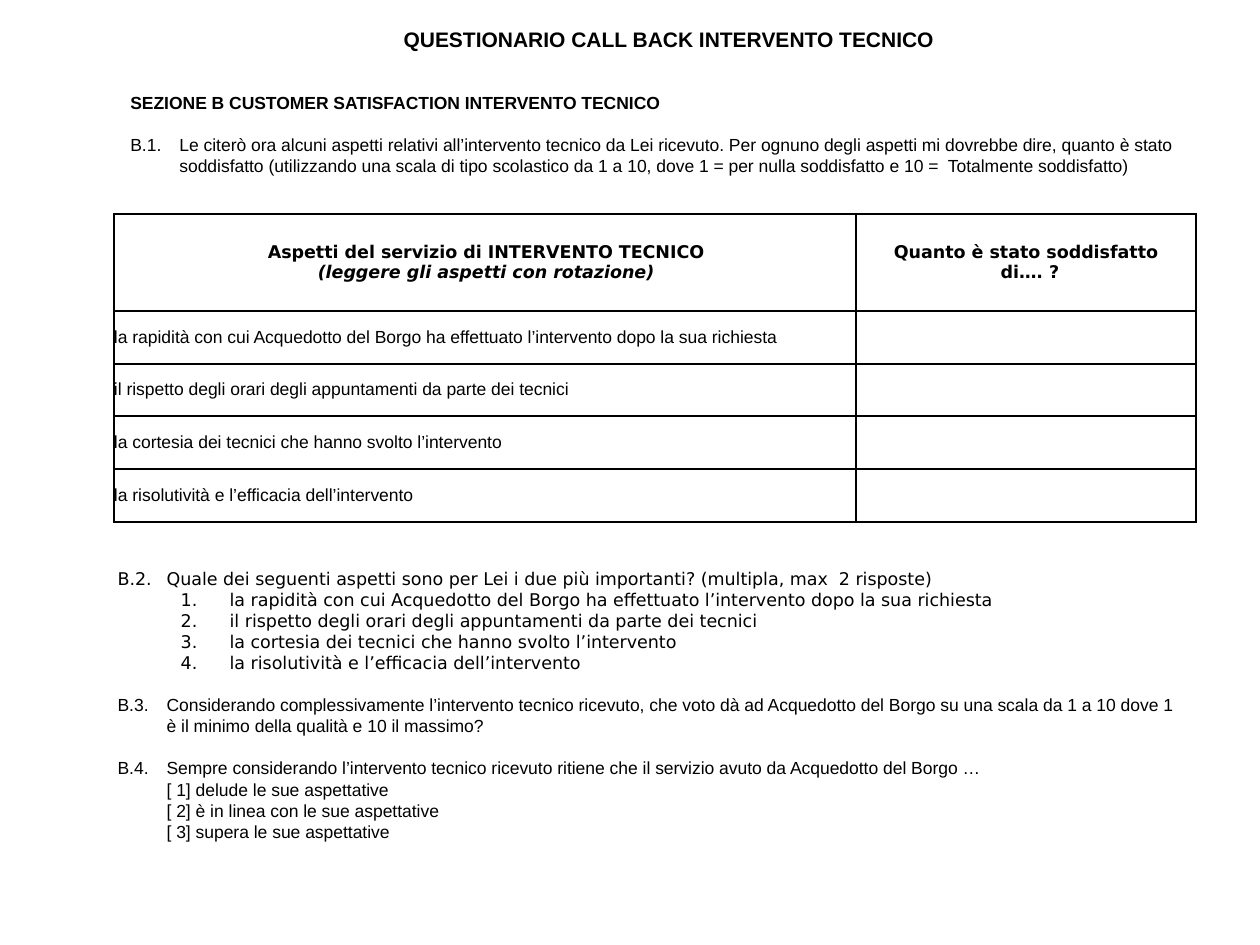
from lxml.etree import SubElement as Sub, Element
from pptx import Presentation
from pptx.dml.color import RGBColor
from pptx.enum.text import MSO_ANCHOR as Anchor, MSO_AUTO_SIZE as Fit, PP_ALIGN as Align
from pptx.oxml.ns import qn
from pptx.util import Pt

BLACK = RGBColor(0, 0, 0)
UNIT = 914400 / 126
ARIAL, SANS = "Arial", "DejaVu Sans"
HANG = 49
FIRM = "Acquedotto del Borgo"
ITEMS = [
    f"la rapidità con cui {FIRM} ha effettuato l’intervento dopo la sua richiesta",
    "il rispetto degli orari degli appuntamenti da parte dei tecnici",
    "la cortesia dei tecnici che hanno svolto l’intervento",
    "la risolutività e l’efficacia dell’intervento",
]


def px(num):
    return round(num * UNIT)


def write(par, text, left=0, first=0, gap=0, mark=None, align=Align.LEFT, **look):
    par.alignment = align
    par.space_before = Pt(gap)
    props = par._p.get_or_add_pPr()
    props.set("marL", str(px(left)))
    props.set("indent", str(px(first)))
    if mark:
        Sub(props, qn("a:buFont"), typeface="+mj-lt")
        Sub(props, qn("a:buAutoNum"), type=mark)
    else:
        Sub(props, qn("a:buNone"))
    if "\t" in text:
        tabs = Sub(props, qn("a:tabLst"))
        Sub(tabs, qn("a:tab"), pos=str(px(left)), algn="l")
    run = par.add_run()
    run.text = text
    run.font.color.rgb = BLACK
    for key, val in ({"name": ARIAL, "size": Pt(10), "bold": False} | look).items():
        setattr(run.font, key, val)


deck = Presentation()
deck.slide_width, deck.slide_height = px(1260), px(945)
slide = deck.slides.add_slide(deck.slide_layouts[1])
title, body = slide.placeholders
intro = slide.shapes.add_textbox(0, 0, 1, 1)

places = [
    (title, (98, 20, 1142, 38), Anchor.MIDDLE),
    (intro, (118, 86, 1108, 119), Anchor.TOP),
    (body, (105, 562, 1089, 289), Anchor.TOP),
]
for shape, area, hold in places:
    for key, val in zip(("left", "top", "width", "height"), area):
        setattr(shape, key, px(val))
    frame = shape.text_frame
    for key, val in {"word_wrap": True, "auto_size": Fit.NONE, "vertical_anchor": hold}.items():
        setattr(frame, key, val)

write(title.text_frame.paragraphs[0], "QUESTIONARIO CALL BACK INTERVENTO TECNICO",
      align=Align.CENTER, size=Pt(12), bold=True)

hung = {"left": HANG, "first": -HANG}
lines = [
    ("SEZIONE B CUSTOMER SATISFACTION INTERVENTO TECNICO", hung | {"bold": True}),
    ("B.1.\tLe citerò ora alcuni aspetti relativi all’intervento tecnico da Lei ricevuto. "
     "Per ognuno degli aspetti mi dovrebbe dire, quanto è stato soddisfatto (utilizzando una scala "
     "di tipo scolastico da 1 a 10, dove 1 = per nulla soddisfatto e 10 =  Totalmente soddisfatto)",
     hung | {"gap": 12}),
]
asks = [("B.2.\tQuale dei seguenti aspetti sono per Lei i due più importanti? "
         "(multipla, max  2 risposte)", hung | {"name": SANS})]
for item in ITEMS:
    asks.append((item, {"left": 112, "first": -HANG, "mark": "arabicPeriod", "name": SANS}))
asks += [
    (f"B.3.\tConsiderando complessivamente l’intervento tecnico ricevuto, che voto dà ad {FIRM} "
     "su una scala da 1 a 10 dove 1 è il minimo della qualità e 10 il massimo?", hung | {"gap": 12}),
    ("B.4.\tSempre considerando l’intervento tecnico ricevuto ritiene che il servizio avuto "
     f"da {FIRM} …", hung | {"gap": 12}),
]
for num, reply in enumerate(("delude", "è in linea con", "supera"), 1):
    asks.append((f"[ {num}] {reply} le sue aspettative", {"left": HANG}))

for shape, group in ((intro, lines), (body, asks)):
    frame = shape.text_frame
    for row, (text, look) in enumerate(group):
        par = frame.add_paragraph() if row else frame.paragraphs[0]
        par.level = int("mark" in look)
        write(par, text, **look)

table = slide.shapes.add_table(5, 2, px(114), px(214), px(1082), px(308)).table
table.first_row = table.horz_banding = False
for col, wide in zip(table.columns, (742, 340)):
    col.width = px(wide)
for row, tall in zip(table.rows, (97, 53, 52, 53, 53)):
    row.height = px(tall)

for row in range(5):
    for col in range(2):
        cell = table.cell(row, col)
        side = 0 if row else px(9)
        look = {"vertical_anchor": Anchor.MIDDLE, "margin_left": side, "margin_right": side,
                "margin_top": 0, "margin_bottom": 0}
        for key, val in look.items():
            setattr(cell, key, val)
        cell.fill.background()
        for spot, edge in enumerate(("lnL", "lnR", "lnT", "lnB")):
            line = Element(qn(f"a:{edge}"), w=str(Pt(1)))
            Sub(Sub(line, qn("a:solidFill")), qn("a:srgbClr"), val=str(BLACK))
            cell._tc.get_or_add_tcPr().insert(spot, line)
        if row and not col:
            write(cell.text_frame.paragraphs[0], ITEMS[row - 1])
        elif row:
            cell.text_frame.paragraphs[0].font.size = Pt(10)

head = {"align": Align.CENTER, "name": SANS, "bold": True}
first = table.cell(0, 0).text_frame
write(first.paragraphs[0], "Aspetti del servizio di INTERVENTO TECNICO", left=2, **head)
write(first.add_paragraph(), "(leggere gli aspetti con rotazione)", left=2, italic=True, **head)
write(table.cell(0, 1).text_frame.paragraphs[0], "Quanto è stato soddisfatto di…. ?",
      left=8, first=-8, **head)

deck.save("out.pptx")
